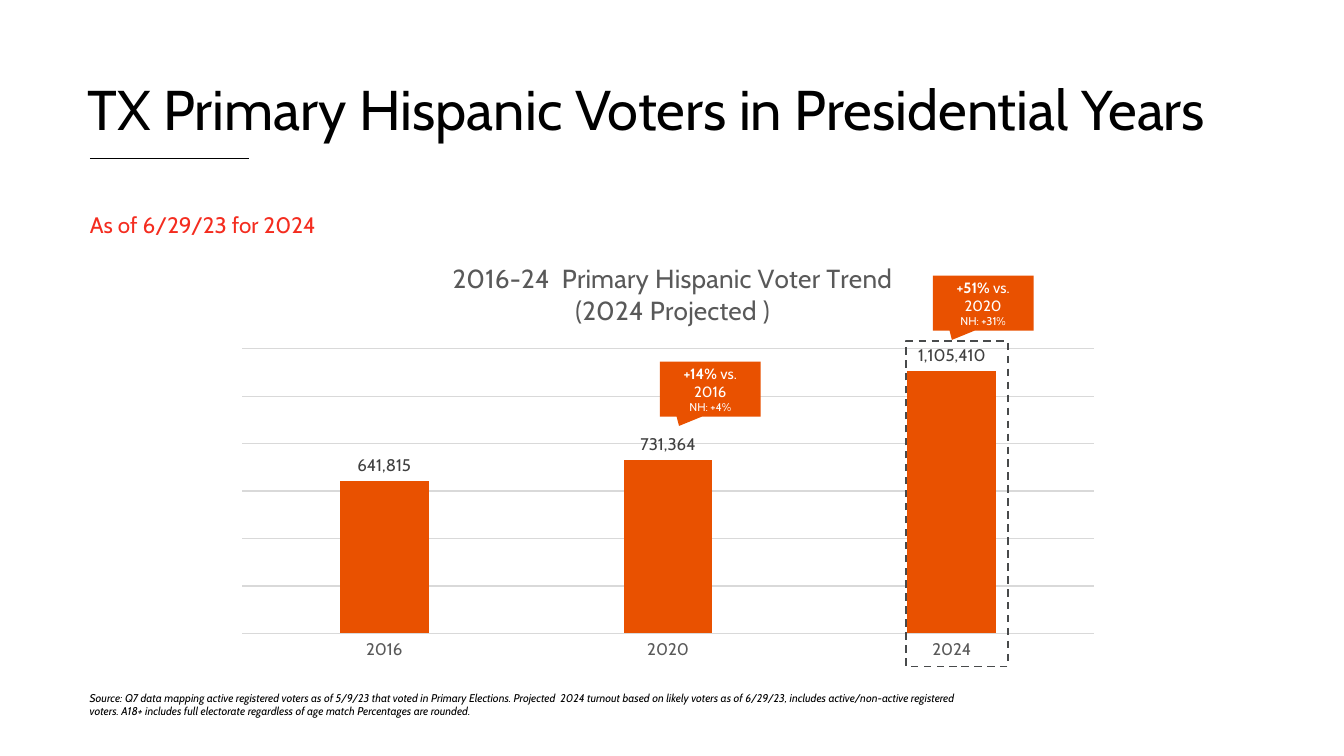
from pptx import Presentation
from pptx import util as u
from pptx.chart import data as cd
from pptx.dml.color import RGBColor
from pptx.enum import chart as ch, dml, shapes, text
from pptx.oxml import parse_xml
from pptx.oxml.ns import nsdecls, qn

Pt = u.Pt
FONT = "Cabin"
COLORS = {
    "black": "000000", "white": "FFFFFF", "red": "F42C1F", "orange": "E95100",
    "grid": "D9D9D9", "axis": "595959", "label": "404040", "dash": "484A4B",
}


def rgb(name):
    return RGBColor.from_string(COLORS[name])


def style(font, size, color, bold=False, italic=False):
    font.name, font.size, font.bold, font.italic = FONT, Pt(size), bold, italic
    font.color.rgb = rgb(color)


def place(sp, box):
    sp.left, sp.top, sp.width, sp.height = (Pt(v) for v in box)


def fill_text(sp, box, words, size, color, anchor, italic=False):
    place(sp, box)
    tf = sp.text_frame
    tf.text = words
    tf.word_wrap = True
    tf.auto_size = text.MSO_AUTO_SIZE.NONE
    tf.vertical_anchor = anchor
    p = tf.paragraphs[0]
    p.alignment = text.PP_ALIGN.LEFT
    p.space_before = Pt(0)
    style(p.runs[0].font, size, color, italic=italic)
    return p


def add_heading(s, box):
    x, y, w, h = box
    p = fill_text(s.shapes.title, box, "TX Primary Hispanic Voters in Presidential Years",
                  30, "black", text.MSO_ANCHOR.TOP)
    p.line_spacing = Pt(29)
    rule = s.shapes.add_connector(shapes.MSO_CONNECTOR.STRAIGHT, Pt(x + 8.6), Pt(y + 41.8),
                                  Pt(x + 93.6), Pt(y + 41.8))
    rule.line.color.rgb = rgb("black")
    rule.line.width = Pt(0.75)
    rule._element.spPr.append(parse_xml(f"<a:effectLst {nsdecls('a')}/>"))


def add_date(s, box):
    p = fill_text(s.placeholders[1], box, "As of 6/29/23 for 2024", 12, "red",
                  text.MSO_ANCHOR.MIDDLE)
    pPr = p._p.get_or_add_pPr()
    pPr.set("marL", "0")
    pPr.set("indent", "0")
    pPr.append(parse_xml(f"<a:buNone {nsdecls('a')}/>"))


def set_layout(parent, index, target="", **values):
    old = parent.find(qn("c:layout"))
    if old is not None:
        parent.remove(old)
    inner = f'<c:layoutTarget val="{target}"/>' if target else ""
    inner += "".join(f'<c:{k}Mode val="edge"/>' for k in "xy")
    inner += "".join(f'<c:{k} val="{v}"/>' for k, v in values.items())
    parent.insert(index, parse_xml(
        f"<c:layout {nsdecls('c')}><c:manualLayout>{inner}</c:manualLayout></c:layout>"))


def add_trend_chart(s, box):
    data = cd.CategoryChartData(number_format="#,##0")
    data.categories = ["2016", "2020", "2024"]
    data.add_series("Series 1", [641815, 731364, 1105410])
    chart = s.shapes.add_chart(ch.XL_CHART_TYPE.COLUMN_CLUSTERED,
                               *(Pt(v) for v in box), data).chart
    style(chart.font, 10, "black")
    chart.has_legend = False

    chart.has_title = True
    tf = chart.chart_title.text_frame
    tf.text = "2016-24  Primary Hispanic Voter Trend\n(2024 Projected )"
    for p in tf.paragraphs:
        p.alignment = text.PP_ALIGN.CENTER
        style(p.runs[0].font, 14, "axis")
    set_layout(chart.chart_title._element, 1, x=0.25, y=0.04)
    set_layout(chart._chartSpace.chart.plotArea, 0, "inner", x=0.02, y=0.25, w=0.95, h=0.65)

    cat = chart.category_axis
    cat.major_tick_mark = ch.XL_TICK_MARK.NONE
    style(cat.tick_labels.font, 9, "axis")
    val = chart.value_axis
    val.visible = False
    val.minimum_scale, val.maximum_scale, val.major_unit = 0, 1200000, 200000
    val.has_major_gridlines = True
    for line in (cat.format.line, val.major_gridlines.format.line):
        line.color.rgb = rgb("grid")
        line.width = Pt(0.75)

    plot = chart.plots[0]
    plot.gap_width, plot.overlap, plot.vary_by_categories = 219, -27, False
    bars = plot.series[0]
    bars.format.fill.solid()
    bars.format.fill.fore_color.rgb = rgb("orange")
    labels = bars.data_labels
    labels.show_value = True
    labels.number_format, labels.number_format_is_linked = "#,##0", False
    labels.position = ch.XL_LABEL_POSITION.OUTSIDE_END
    style(labels.font, 9, "label")


def add_highlight(s, box):
    sp = s.shapes.add_shape(shapes.MSO_SHAPE.RECTANGLE, *(Pt(v) for v in box))
    sp.shadow.inherit = False
    sp.fill.background()
    sp.line.color.rgb = rgb("dash")
    sp.line.width = Pt(1)
    sp.line.dash_style = dml.MSO_LINE.DASH


def add_callout(s, box, change, versus, nh):
    sp = s.shapes.add_shape(shapes.MSO_SHAPE.RECTANGULAR_CALLOUT, *(Pt(v) for v in box))
    sp.adjustments[0], sp.adjustments[1] = -0.31, 0.67
    sp.shadow.inherit = False
    sp.fill.solid()
    sp.fill.fore_color.rgb = rgb("orange")
    sp.line.fill.background()
    tf = sp.text_frame
    tf.word_wrap = True
    tf.vertical_anchor = text.MSO_ANCHOR.MIDDLE
    rows = [[(f"{change} ", 8, True), (f"vs. {versus}", 8, False)], [(f"NH: {nh}", 6, False)]]
    for i, row in enumerate(rows):
        p = tf.add_paragraph() if i else tf.paragraphs[0]
        p.alignment = text.PP_ALIGN.CENTER
        for words, size, bold in row:
            r = p.add_run()
            r.text = words
            style(r.font, size, "white", bold=bold)


def add_source(s, box):
    words = ("Source: Q7 data mapping active registered voters as of 5/9/23 that voted in Primary "
             "Elections. Projected  2024 turnout based on likely voters as of 6/29/23, includes "
             "active/non-active registered voters. A18+ includes full electorate regardless of "
             "age match Percentages are rounded.")
    sp = s.shapes.add_textbox(*(Pt(v) for v in box))
    p = fill_text(sp, box, words, 6, "black", text.MSO_ANCHOR.TOP, italic=True)
    p.line_spacing = 0.9


def main():
    prs = Presentation()
    prs.slide_width, prs.slide_height = Pt(720), Pt(405)
    s = prs.slides.add_slide(prs.slide_layouts[1])
    add_date(s, (41, 109.4, 274.3, 21.6))
    add_heading(s, (39.6, 43.2, 700.6, 61.9))
    add_trend_chart(s, (120.2, 128.2, 480.2, 234.7))
    add_highlight(s, (485.3, 182.9, 54.7, 174.2))
    add_source(s, (41, 367.9, 491, 14.4))
    for x, y, change, versus, nh in [(499.7, 147.6, "+51%", 2020, "+31%"),
                                     (353.5, 193.7, "+14%", 2016, "+4%")]:
        add_callout(s, (x, y, 54, 29.5), change, versus, nh)
    prs.save("out.pptx")


if __name__ == "__main__":
    main()
